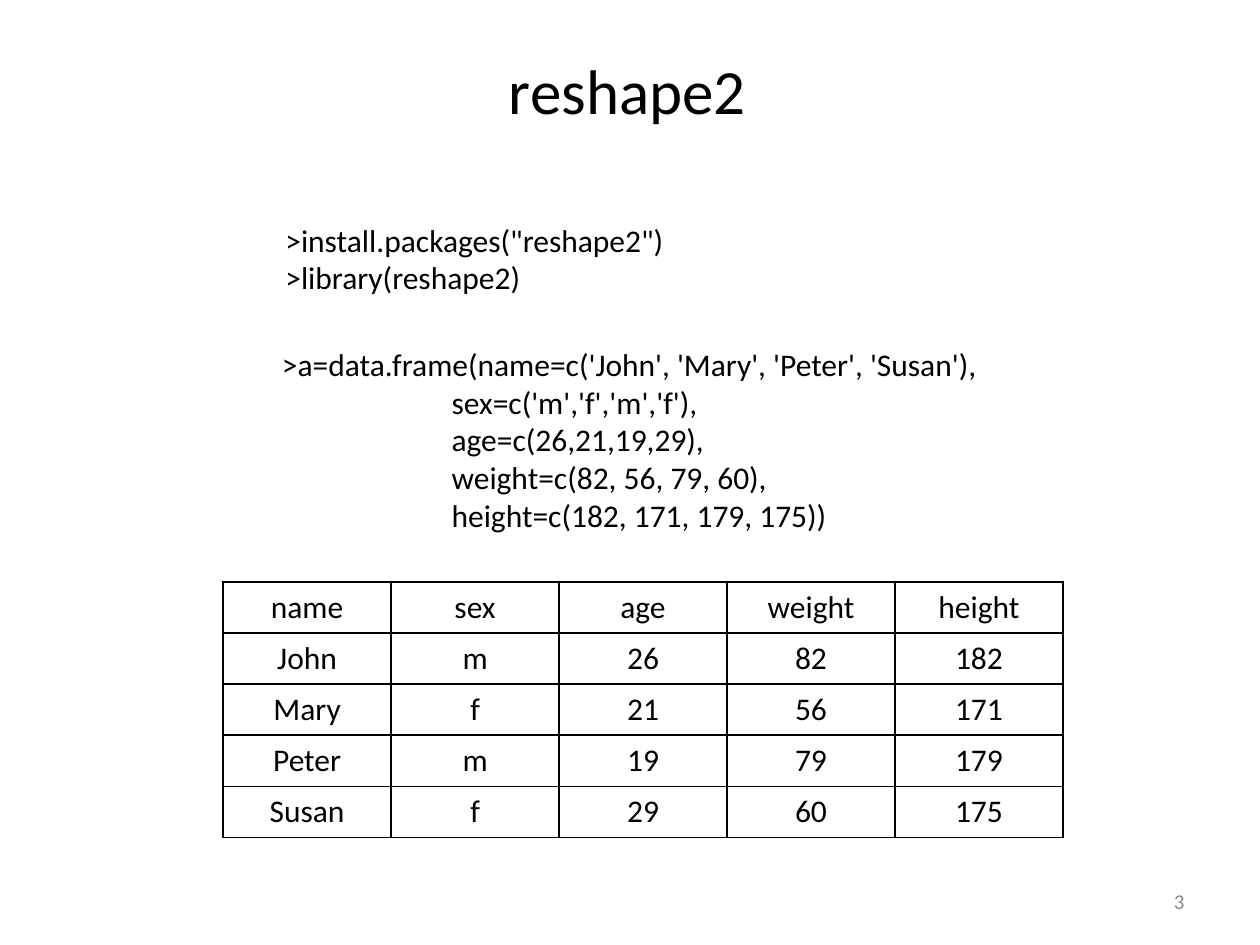
import lxml.etree
import pptx
import pptx.dml.color
import pptx.enum.text
import pptx.oxml.ns
import pptx.util

Pt = pptx.util.Pt
qn = pptx.oxml.ns.qn
ALIGN = pptx.enum.text.PP_ALIGN
ANCHOR = pptx.enum.text.MSO_ANCHOR
COLORS = {"ink": "000000", "page_number": "8C8C8C", "paper": "FFFFFF"}


def write_text(frame, text, size=18, color="ink", align=ALIGN.LEFT,
               anchor=ANCHOR.TOP, hanging=0):
    """Write one paragraph per line; lines after the first start at hanging."""
    frame.word_wrap = True
    frame.vertical_anchor = anchor
    frame.text = text
    for number, paragraph in enumerate(frame.paragraphs):
        paragraph.alignment = align
        if hanging and number:
            paragraph._p.get_or_add_pPr().set("marL", str(Pt(hanging)))
        font = paragraph.runs[0].font
        font.name = "Calibri"
        font.size = Pt(size)
        font.color.rgb = pptx.dml.color.RGBColor.from_string(COLORS[color])


def draw_borders(cell):
    properties = cell._tc.get_or_add_tcPr()
    for position, side in enumerate(("a:lnL", "a:lnR", "a:lnT", "a:lnB")):
        line = lxml.etree.Element(qn(side), w=str(Pt(1)))
        fill = lxml.etree.SubElement(line, qn("a:solidFill"))
        lxml.etree.SubElement(fill, qn("a:srgbClr"), val=COLORS["ink"])
        properties.insert(position, line)


deck = pptx.Presentation()
deck.slide_width, deck.slide_height = Pt(720), Pt(540)
slide = deck.slides.add_slide(deck.slide_layouts[6])
slide.background.fill.solid()
slide.background.fill.fore_color.rgb = pptx.dml.color.RGBColor.from_string(COLORS["paper"])

# Title, code and page number
install_code = """>install.packages("reshape2")
>library(reshape2)"""
frame_code = """>a=data.frame(name=c('John', 'Mary', 'Peter', 'Susan'),
sex=c('m','f','m','f'),
age=c(26,21,19,29),
weight=c(82, 56, 79, 60),
height=c(182, 171, 179, 175))"""
texts = [
    ((-1.5, 26, 720, 51), "reshape2", dict(size=36, align=ALIGN.CENTER)),
    ((156, 122.5, 360, 51), install_code, {}),
    ((154, 193.5, 415.5, 116.5), frame_code, dict(hanging=97)),
    ((516, 500.5, 168, 28.8), "3",
     dict(size=12, color="page_number", align=ALIGN.RIGHT, anchor=ANCHOR.MIDDLE)),
]
for place, text, style in texts:
    box = slide.shapes.add_textbox(*map(Pt, place))
    write_text(box.text_frame, text, **style)

# Resulting data frame
people = [
    ("name", "sex", "age", "weight", "height"),
    ("John", "m", 26, 82, 182),
    ("Mary", "f", 21, 56, 171),
    ("Peter", "m", 19, 79, 179),
    ("Susan", "f", 29, 60, 175),
]
people_table = slide.shapes.add_table(
    len(people), len(people[0]), Pt(127.5), Pt(332.5), Pt(480), Pt(146)).table
people_table.first_row = people_table.horz_banding = False
for row, person in enumerate(people):
    for column, value in enumerate(person):
        cell = people_table.cell(row, column)
        cell.fill.background()
        write_text(cell.text_frame, str(value), align=ALIGN.CENTER)
        draw_borders(cell)

deck.save("out.pptx")
